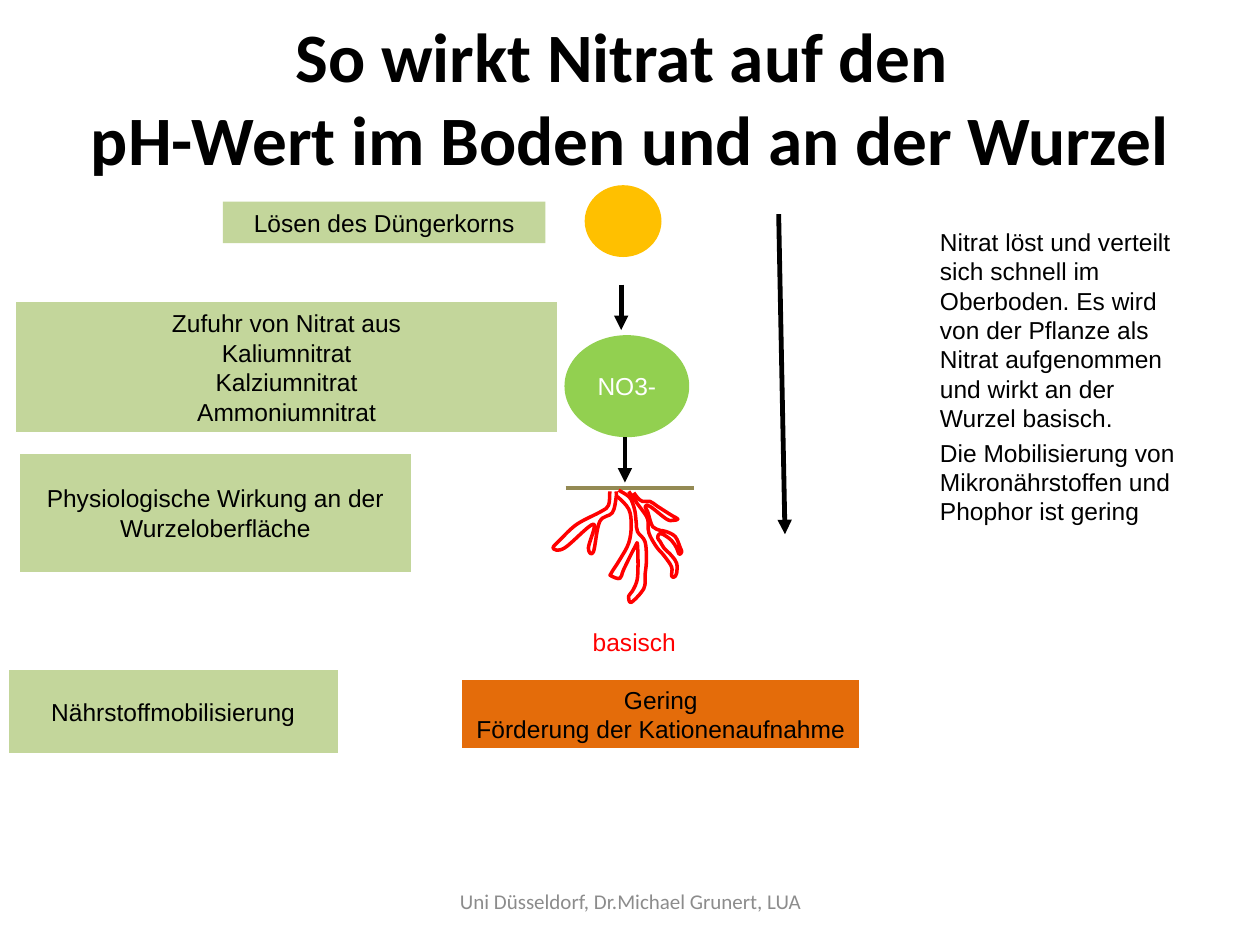
from dataclasses import dataclass

from lxml import etree
from pptx import Presentation
from pptx import util as u
from pptx.dml import color
from pptx.enum import shapes, text
from pptx.oxml import ns


@dataclass(frozen=True)
class Theme:
    black: str = "000000"
    white: str = "FFFFFF"
    red: str = "FF0000"
    label: str = "C3D69B"
    nitrate: str = "92D050"
    granule: str = "FFC000"
    result: str = "E46C0A"
    soil: str = "948A54"
    footer: str = "8C8C8C"
    title_size: float = 39.6
    text_size: float = 14
    footer_size: float = 12
    arrow_width: float = 2.75
    soil_width: float = 2.25
    root_width: float = 2
    title_font: str = "Calibri"
    text_font: str = "Arial"


THEME = Theme()
RECT = shapes.MSO_SHAPE.RECTANGLE
PROCESS = shapes.MSO_SHAPE.FLOWCHART_PROCESS
CIRCLE = shapes.MSO_SHAPE.FLOWCHART_CONNECTOR

# Root outlines in hundredths of an inch from the corner of the root box
ROOTS = [
    [(45, 1), (44, 12), (38, 17), (19, 27), (6, 39), (0, 46), (9, 46), (32, 27),
     (28, 46), (32, 49), (37, 25), (47, 18), (50, 6), (50, 1)],
    [(51, 5), (60, 15), (62, 28), (60, 42), (53, 55), (46, 66), (46, 68), (53, 70),
     (56, 63), (65, 45), (67, 44), (67, 69), (63, 80), (60, 84), (62, 89), (72, 78),
     (73, 67), (74, 56), (73, 41), (67, 33), (66, 26), (65, 17), (63, 10), (60, 5),
     (52, 0)],
    [(60, 1), (67, 11), (70, 15), (75, 23), (76, 34), (82, 45), (88, 52), (94, 61),
     (94, 68), (96, 69), (98, 66), (98, 58), (94, 52), (88, 46), (85, 41), (83, 38),
     (84, 35), (87, 35), (94, 40), (98, 46), (100, 51), (102, 49), (101, 46),
     (97, 37), (90, 33), (85, 32), (82, 31), (79, 29), (77, 24), (75, 17), (73, 13),
     (77, 13), (90, 23), (95, 24), (99, 23), (94, 20), (83, 13), (77, 9), (71, 9),
     (67, 6), (64, 2)],
]


def rgb(value):
    return color.RGBColor.from_string(value)


def inches(box):
    return [u.Inches(value) for value in box]


def place(shape, box):
    shape.left, shape.top, shape.width, shape.height = inches(box)


def format_text(frame, size, ink, font=THEME.text_font, bold=False,
                align=text.PP_ALIGN.CENTER, anchor=text.MSO_ANCHOR.MIDDLE):
    frame.word_wrap = True
    frame.auto_size = text.MSO_AUTO_SIZE.NONE
    frame.vertical_anchor = anchor
    for paragraph in frame.paragraphs:
        paragraph.alignment = align
        for run in paragraph.runs:
            run.font.size = u.Pt(size)
            run.font.name = font
            run.font.bold = bold
            run.font.color.rgb = rgb(ink)


def add_block(slide, kind, box, fill, words="", ink=THEME.black):
    shape = slide.shapes.add_shape(kind, *inches(box))
    shape.shadow.inherit = False
    shape.fill.solid()
    shape.fill.fore_color.rgb = rgb(fill)
    shape.line.fill.background()
    if words:
        frame = shape.text_frame
        frame.text = words
        frame.margin_left = frame.margin_right = u.Inches(0.05)
        format_text(frame, THEME.text_size, ink)


def add_line(slide, start, end, ink=THEME.black, width=THEME.arrow_width, arrow=True):
    line = slide.shapes.add_connector(
        shapes.MSO_CONNECTOR.STRAIGHT, *inches(start + end))
    line.line.color.rgb = rgb(ink)
    line.line.width = u.Pt(width)
    if arrow:
        etree.SubElement(line.line._get_or_add_ln(), ns.qn("a:tailEnd"), type="triangle")
    etree.SubElement(line._element.spPr, ns.qn("a:effectLst"))


def bend(freeform):
    """Turn the straight segments into one smooth curve through their ends."""
    points = [(int(point.get("x")), int(point.get("y")))
              for point in freeform._element.iter(ns.qn("a:pt"))]
    padded = [points[0], *points, points[-1]]
    segments = list(freeform._element.iter(ns.qn("a:lnTo")))
    for segment, a, b, c, d in zip(segments, padded, padded[1:], padded[2:], padded[3:]):
        curve = etree.Element(ns.qn("a:cubicBezTo"))
        leaving = [q + (r - p) / 6 for p, q, r in zip(a, b, c)]
        arriving = [r - (s - q) / 6 for q, r, s in zip(b, c, d)]
        for x, y in (leaving, arriving, c):
            etree.SubElement(curve, ns.qn("a:pt"), x=str(round(x)), y=str(round(y)))
        segment.getparent().replace(segment, curve)


def add_roots(slide, left, top):
    for outline in ROOTS:
        points = [inches((left + x / 100, top + y / 100)) for x, y in outline]
        builder = slide.shapes.build_freeform(*points[0])
        builder.add_line_segments(points[1:], close=False)
        root = builder.convert_to_shape()
        bend(root)
        root.shadow.inherit = False
        root.fill.background()
        root.line.color.rgb = rgb(THEME.red)
        root.line.width = u.Pt(THEME.root_width)


def add_title(slide, box):
    title = slide.shapes.title
    place(title, box)
    title.text_frame.text = "So wirkt Nitrat auf den \vpH-Wert im Boden und an der Wurzel"
    format_text(title.text_frame, THEME.title_size, THEME.black, THEME.title_font, True)


def add_explanation(slide, box):
    body = slide.placeholders[1]
    place(body, box)
    body.text_frame.text = (
        "Nitrat löst und verteilt sich schnell im Oberboden. Es wird von der Pflanze "
        "als Nitrat aufgenommen und wirkt an der Wurzel basisch.\n"
        "Die Mobilisierung von Mikronährstoffen und Phophor ist gering")
    format_text(body.text_frame, THEME.text_size, THEME.black,
                align=text.PP_ALIGN.LEFT, anchor=text.MSO_ANCHOR.TOP)
    for paragraph in body.text_frame.paragraphs:
        paragraph.space_before = u.Pt(THEME.text_size * 0.2)
        properties = paragraph._p.get_or_add_pPr()
        properties.set("marL", "0")
        properties.set("indent", "0")
        etree.SubElement(properties, ns.qn("a:buNone"))


def add_labels(slide, left, top):
    """Stage names, placed from the corner of the left column."""
    labels = [
        (RECT, (1.7, 0, 2.56, 0.33), "Lösen des Düngerkorns"),
        (PROCESS, (0.06, 0.8, 4.29, 1.03),
         "Zufuhr von Nitrat aus\nKaliumnitrat\nKalziumnitrat\nAmmoniumnitrat"),
        (PROCESS, (0.09, 2, 3.1, 0.94), "Physiologische Wirkung an der Wurzeloberfläche"),
        (PROCESS, (0, 3.72, 2.61, 0.66), "Nährstoffmobilisierung"),
    ]
    for kind, (x, y, width, height), words in labels:
        add_block(slide, kind, (left + x, top + y, width, height), THEME.label, words)


def add_process(slide, left, top):
    """Path from granule to root, placed from its top left corner."""
    def at(x, y, *size):
        return (left + x, top + y, *size)

    add_block(slide, CIRCLE, at(0.81, 1.19, 0.99, 0.81), THEME.nitrate,
              "NO3-", THEME.white)
    add_block(slide, CIRCLE, at(0.97, 0, 0.61, 0.57), THEME.granule)
    # Arrows into the nitrate and along the whole path
    add_line(slide, at(1.26, 0.79), at(1.26, 1.15))
    add_line(slide, at(2.51, 0.23), at(2.56, 2.77))
    add_block(slide, PROCESS, at(0, 3.93, 3.15, 0.54), THEME.result,
              "Gering\nFörderung der Kationenaufnahme")
    # Soil surface and roots
    add_line(slide, at(0.82, 2.4), at(1.84, 2.4), THEME.soil, THEME.soil_width, False)
    add_roots(slide, *at(0.72, 2.42))
    add_block(slide, PROCESS, at(0.73, 3.41, 1.27, 0.43), THEME.white,
              "basisch", THEME.red)
    # Arrow from the nitrate to the soil
    add_line(slide, at(1.29, 2), at(1.29, 2.36))


def add_footer(slide, box):
    footer = slide.shapes.add_textbox(*inches(box))
    footer.text_frame.text = "Uni Düsseldorf, Dr.Michael Grunert, LUA"
    format_text(footer.text_frame, THEME.footer_size, THEME.footer, THEME.title_font)


def main():
    presentation = Presentation()
    presentation.slide_width, presentation.slide_height = inches((10, 7.5))
    slide = presentation.slides.add_slide(presentation.slide_layouts[1])
    add_title(slide, (0.5, 0.14, 9, 1.25))
    add_explanation(slide, (7.36, 1.75, 2.14, 4.95))
    add_labels(slide, 0.07, 1.6)
    add_process(slide, 3.67, 1.47)
    add_footer(slide, (3.42, 6.95, 3.17, 0.4))
    presentation.save("out.pptx")


if __name__ == "__main__":
    main()
